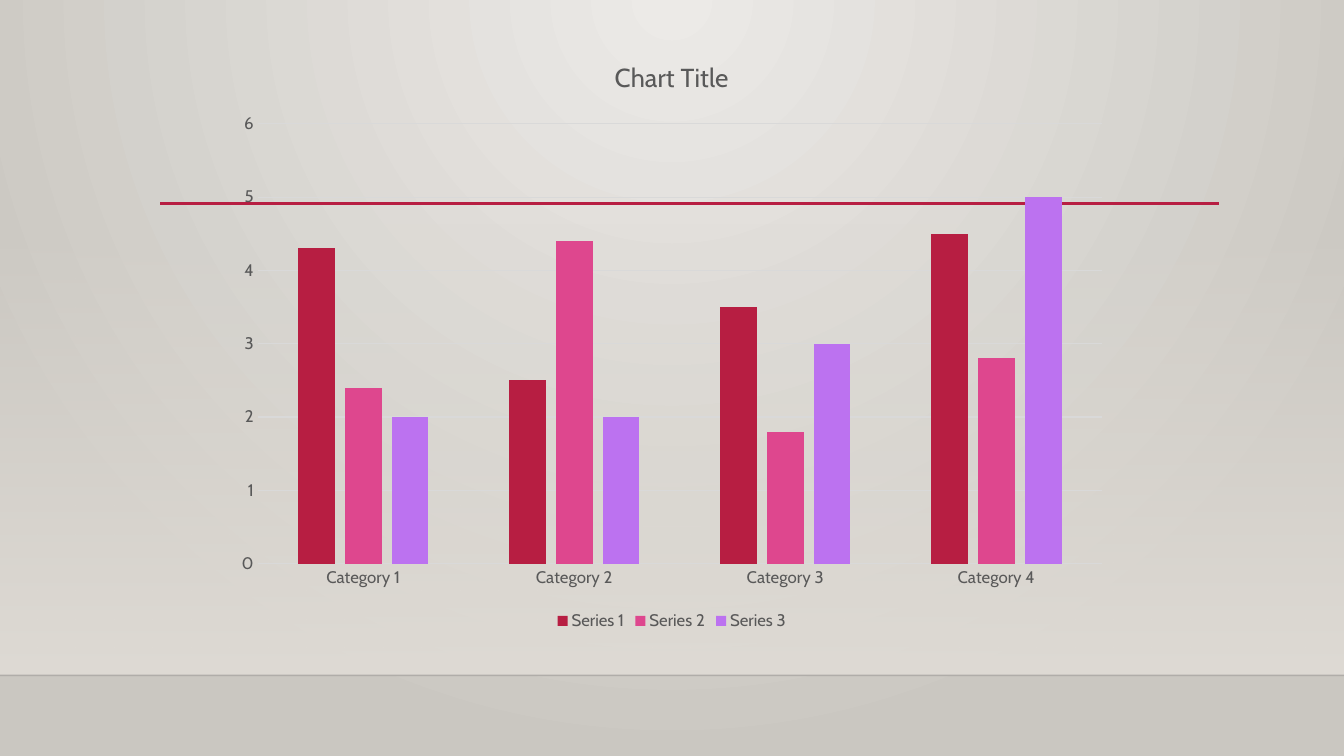
from dataclasses import dataclass

from lxml import etree
from pptx import Presentation, oxml
from pptx.chart import data as source
from pptx.dml.color import RGBColor
from pptx.enum import chart as kinds, shapes
from pptx.oxml import ns
from pptx.util import Cm, Pt

PALE = RGBColor(0xEC, 0xEA, 0xE7)
STONE = RGBColor(0xCA, 0xC7, 0xC1)
SAND = RGBColor(0xDF, 0xDB, 0xD5)
INK = RGBColor(0x00, 0x00, 0x01)
BLACK = RGBColor(0x00, 0x00, 0x00)
GREY = RGBColor(0x59, 0x59, 0x59)
SILVER = RGBColor(0xD9, 0xD9, 0xD9)
RED = RGBColor(0xB7, 0x1E, 0x42)
PINK = RGBColor(0xDE, 0x47, 0x8E)
VIOLET = RGBColor(0xBC, 0x72, 0xF0)
FACE = "Cabin"
WIDE = 33.87
FLOOR = 17.02


@dataclass
class Stop:
    place: int
    color: RGBColor
    alpha: int = 100


@dataclass
class Rule:
    left: float
    right: float
    top: float
    color: RGBColor
    weight: float
    alpha: int = 100


@dataclass
class Group:
    name: str
    values: tuple[float, ...]
    color: RGBColor


RULES = [
    Rule(0, WIDE, FLOOR, INK, 1, 20),
    Rule(4.04, 30.73, 5.13, RED, 2.5),
]
GROUPS = [
    Group("Series 1", (4.3, 2.5, 3.5, 4.5), RED),
    Group("Series 2", (2.4, 4.4, 1.8, 2.8), PINK),
    Group("Series 3", (2, 2, 3, 5), VIOLET),
]


def shade(old, stops: list[Stop], course: str) -> None:
    marks = "".join(
        f'<a:gs pos="{s.place * 1000}"><a:srgbClr val="{s.color}">'
        f'<a:alpha val="{s.alpha * 1000}"/></a:srgbClr></a:gs>'
        for s in stops
    )
    new = oxml.parse_xml(
        f'<a:gradFill {ns.nsdecls("a")} rotWithShape="1">'
        f"<a:gsLst>{marks}</a:gsLst>{course}</a:gradFill>"
    )
    old.getparent().replace(old, new)


def paint(slide) -> None:
    slide.background.fill.solid()
    shade(
        slide.element.find(".//" + ns.qn("p:bgPr")).find(ns.qn("a:solidFill")),
        [Stop(0, PALE), Stop(100, STONE)],
        '<a:path path="circle">'
        '<a:fillToRect l="43000" t="0" r="43000" b="100000"/></a:path>',
    )
    top = 5.61
    wall = slide.shapes.add_shape(
        shapes.MSO_SHAPE.RECTANGLE, Cm(0), Cm(top), Cm(WIDE), Cm(FLOOR - top)
    )
    wall.shadow.inherit = False
    wall.line.fill.background()
    wall.fill.solid()
    shade(
        wall.element.spPr.find(ns.qn("a:solidFill")),
        [Stop(0, SAND, 0), Stop(100, SAND)],
        '<a:lin ang="5400000" scaled="0"/>',
    )


def draw(slide, rule: Rule) -> None:
    line = slide.shapes.add_connector(
        shapes.MSO_CONNECTOR.STRAIGHT,
        Cm(rule.left), Cm(rule.top), Cm(rule.right), Cm(rule.top),
    )
    line.line.color.rgb = rule.color
    line.line.width = Pt(rule.weight)
    props = line.element.spPr
    if rule.alpha < 100:
        tint = props.find(".//" + ns.qn("a:srgbClr"))
        etree.SubElement(tint, ns.qn("a:alpha"), val=str(rule.alpha * 1000))
    etree.SubElement(props, ns.qn("a:effectLst"))


def style(font, size: float, color: RGBColor) -> None:
    font.name = FACE
    font.size = Pt(size)
    font.bold = False
    font.color.rgb = color


def trace(line) -> None:
    line.color.rgb = SILVER
    line.width = Pt(0.75)


def plot(slide) -> None:
    data = source.CategoryChartData()
    data.categories = [f"Category {n}" for n in range(1, 5)]
    for group in GROUPS:
        data.add_series(group.name, group.values)
    chart = slide.shapes.add_chart(
        kinds.XL_CHART_TYPE.COLUMN_CLUSTERED,
        Cm(5.64), Cm(0.94), Cm(22.58), Cm(15.06), data,
    ).chart
    style(chart.font, 10, BLACK)

    chart.has_title = True
    run = chart.chart_title.text_frame.paragraphs[0].add_run()
    run.text = "Chart Title"
    style(run.font, 18.6, GREY)
    chart.chart_title.include_in_layout = False

    chart.has_legend = True
    chart.legend.position = kinds.XL_LEGEND_POSITION.BOTTOM
    chart.legend.include_in_layout = False
    style(chart.legend.font, 12, GREY)

    for axis in (chart.category_axis, chart.value_axis):
        axis.major_tick_mark = kinds.XL_TICK_MARK.NONE
        axis.minor_tick_mark = kinds.XL_TICK_MARK.NONE
        style(axis.tick_labels.font, 12, GREY)
    trace(chart.category_axis.format.line)
    scale = chart.value_axis
    scale.format.line.fill.background()
    scale.has_major_gridlines = True
    trace(scale.major_gridlines.format.line)
    scale.minimum_scale, scale.maximum_scale, scale.major_unit = 0, 6, 1

    bars = chart.plots[0]
    bars.gap_width = 219
    bars.overlap = -27
    bars.vary_by_categories = False
    for series, group in zip(bars.series, GROUPS):
        series.invert_if_negative = False
        series.format.fill.solid()
        series.format.fill.fore_color.rgb = group.color


def main() -> None:
    deck = Presentation()
    deck.slide_width, deck.slide_height = Cm(WIDE), Cm(19.05)
    slide = deck.slides.add_slide(deck.slide_layouts[6])
    paint(slide)
    for rule in RULES:
        draw(slide, rule)
    plot(slide)
    deck.save("out.pptx")


if __name__ == "__main__":
    main()
